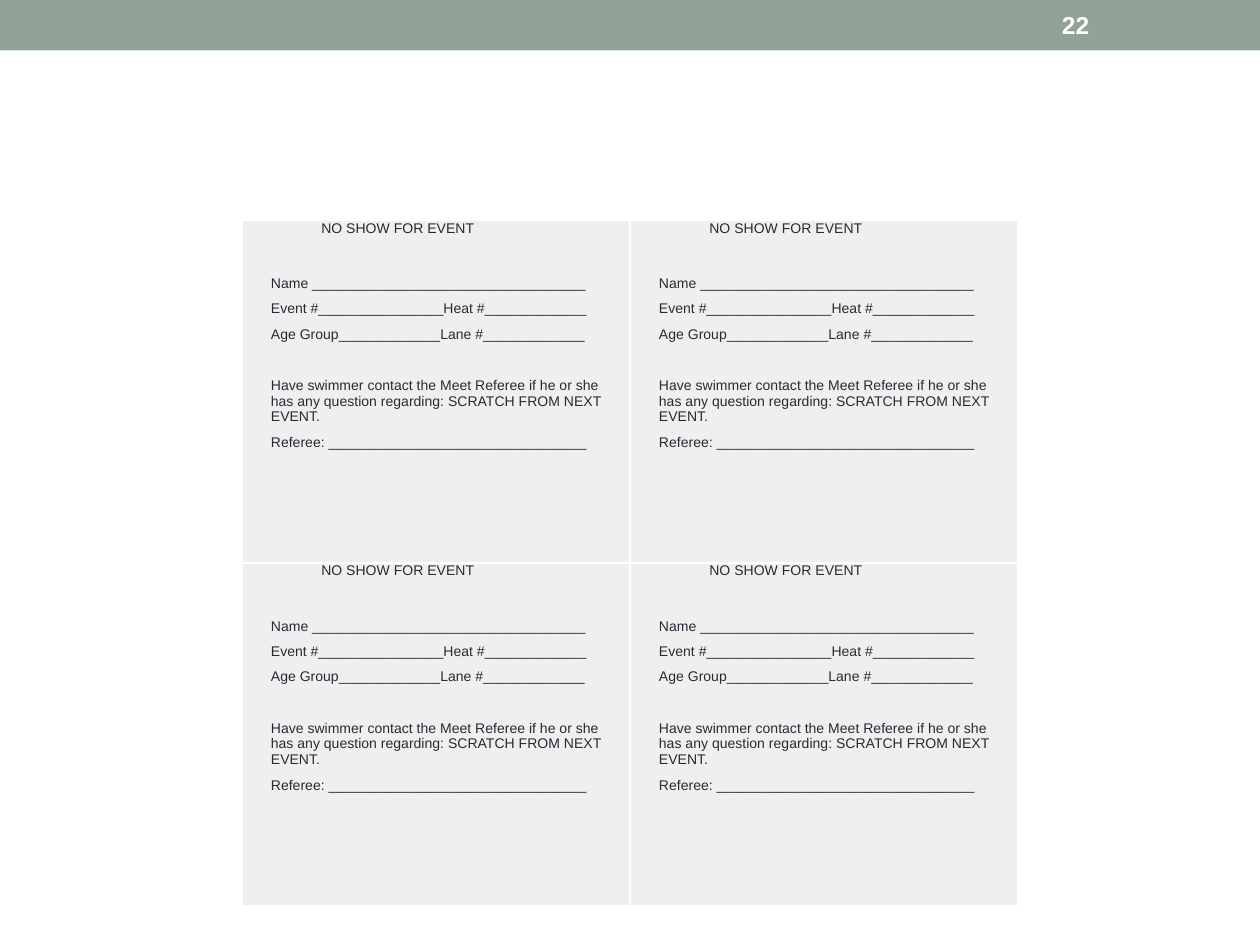
"""Build a slide with four no-show forms for swim meet events."""
from lxml import etree
from pptx import Presentation
from pptx.dml.color import RGBColor
from pptx.enum.shapes import MSO_SHAPE
from pptx.enum.text import MSO_ANCHOR
from pptx.oxml.ns import qn
from pptx.util import Inches, Pt

RECT = MSO_SHAPE.RECTANGLE
MIDDLE = MSO_ANCHOR.MIDDLE
SAGE = RGBColor(0x93, 0xA2, 0x99)
PALE = RGBColor(0xEE, 0xF0, 0xEF)
INK = RGBColor(0x29, 0x29, 0x34)
WHITE = RGBColor(0xFF, 0xFF, 0xFF)

PAGE_NUMBER = "22"
FORM = [  # text, left indent in inches, space before in points
    ("NO SHOW FOR EVENT", 0.48, 0),
    ("Name " + "_" * 35, 0.08, 22.5),
    ("Event #" + "_" * 16 + "Heat #" + "_" * 13, 0.08, 5.5),
    ("Age Group" + "_" * 13 + "Lane #" + "_" * 13, 0.08, 5.5),
    ("Have swimmer contact the Meet Referee if he or she has any question "
     "regarding: SCRATCH FROM NEXT EVENT.", 0.08, 20.2),
    ("Referee: " + "_" * 33, 0.08, 5.5),
]
ROWS, COLS = 2, 2
COL_WIDTH, ROW_HEIGHT = 3.08, 2.72
CELL_FORMAT = {"margin_left": Inches(0.15), "margin_right": Inches(0.15),
               "margin_top": 0, "margin_bottom": 0}


def add_run(p, text, size, color, bold=False):
    r = p.add_run()
    r.text = text
    for name, value in {"name": "Arial", "size": Pt(size), "bold": bold}.items():
        setattr(r.font, name, value)
    r.font.color.rgb = color


def add_borders(cell):
    tcPr = cell._tc.get_or_add_tcPr()
    for i, side in enumerate(("lnL", "lnR", "lnT", "lnB")):
        ln = etree.Element(qn(f"a:{side}"), w=str(Pt(1)))
        fill = etree.SubElement(ln, qn("a:solidFill"))
        etree.SubElement(fill, qn("a:srgbClr"), val=str(WHITE))
        tcPr.insert(i, ln)


def fill_form(cell):
    for name, value in CELL_FORMAT.items():
        setattr(cell, name, value)
    cell.fill.solid()
    cell.fill.fore_color.rgb = PALE
    add_borders(cell)
    tf = cell.text_frame
    for i, (text, indent, before) in enumerate(FORM):
        p = tf.add_paragraph() if i else tf.paragraphs[0]
        p.space_before = Pt(before)
        p._p.get_or_add_pPr().set("marL", str(Inches(indent)))
        add_run(p, text, 8, INK)


def main():
    prs = Presentation()
    prs.slide_width, prs.slide_height = Inches(10), Inches(7.5)
    s = prs.slides.add_slide(prs.slide_layouts[6])

    band = s.shapes.add_shape(RECT, 0, 0, prs.slide_width, Inches(0.4))
    band.shadow.inherit = False
    band.fill.solid()
    band.fill.fore_color.rgb = SAGE
    band.line.fill.background()

    number = s.shapes.add_textbox(Inches(8.33), Inches(0.02), Inches(1.17), Inches(0.36))
    tf = number.text_frame
    tf.word_wrap = True
    tf.vertical_anchor = MIDDLE
    add_run(tf.paragraphs[0], PAGE_NUMBER, 14, WHITE, True)

    forms = s.shapes.add_table(ROWS, COLS, Inches(1.92), Inches(1.75),
                               Inches(COLS * COL_WIDTH), Inches(ROWS * ROW_HEIGHT)).table
    forms.first_row = forms.horz_banding = False
    for cell in forms.iter_cells():
        fill_form(cell)

    prs.save("out.pptx")


if __name__ == "__main__":
    main()
